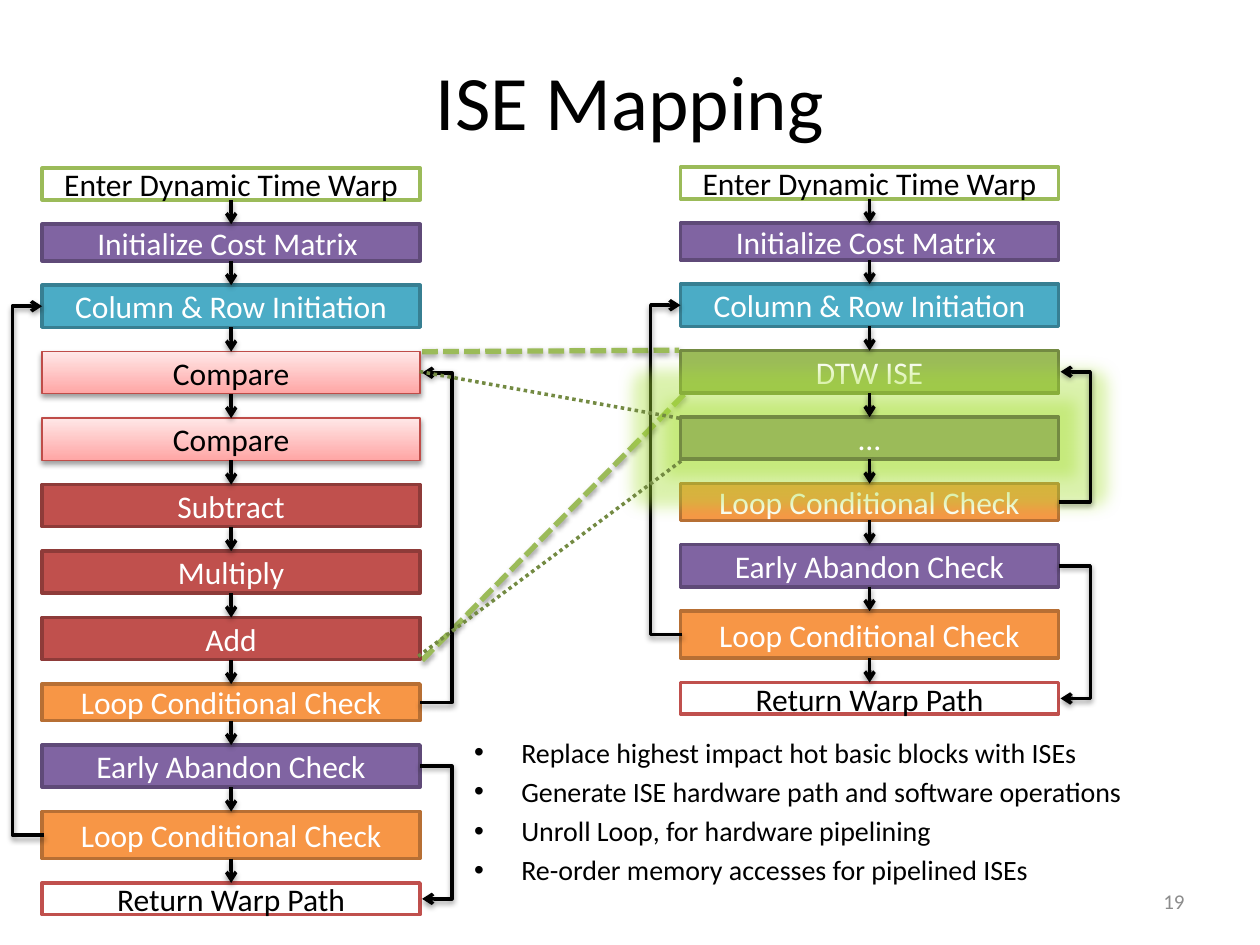
from lxml import etree
from pptx import Presentation
from pptx.dml.color import RGBColor
from pptx.enum.dml import MSO_LINE
from pptx.enum.shapes import MSO_CONNECTOR, MSO_SHAPE
from pptx.enum.text import MSO_ANCHOR, PP_ALIGN
from pptx.oxml import parse_xml
from pptx.oxml.ns import nsdecls, qn
from pptx.util import Cm, Pt

STRAIGHT, ELBOW = MSO_CONNECTOR.STRAIGHT, MSO_CONNECTOR.ELBOW
RECTANGLE = MSO_SHAPE.RECTANGLE
DASHED, DOTTED = MSO_LINE.SQUARE_DOT, MSO_LINE.ROUND_DOT
LEFT, CENTER, RIGHT = PP_ALIGN.LEFT, PP_ALIGN.CENTER, PP_ALIGN.RIGHT
TOP, MIDDLE = MSO_ANCHOR.TOP, MSO_ANCHOR.MIDDLE

BLACK, WHITE = RGBColor(0, 0, 0), RGBColor(255, 255, 255)
GRAY = RGBColor(0x8C, 0x8C, 0x8C)
GREEN, DARK_GREEN = RGBColor(0x9B, 0xBB, 0x59), RGBColor(0x73, 0x8A, 0x42)
RED, DARK_RED = RGBColor(0xC0, 0x50, 0x4D), RGBColor(0x8E, 0x3B, 0x39)
PURPLE, DARK_PURPLE = RGBColor(0x80, 0x64, 0xA2), RGBColor(0x5F, 0x4A, 0x78)
TEAL, DARK_TEAL = RGBColor(0x4B, 0xAC, 0xC6), RGBColor(0x37, 0x7F, 0x92)
ORANGE, DARK_ORANGE = RGBColor(0xF7, 0x96, 0x46), RGBColor(0xB7, 0x6F, 0x34)
PINK, PALE_PINK = RGBColor(0xFF, 0xA6, 0xA5), RGBColor(0xFF, 0xE7, 0xE7)
PINK_EDGE = RGBColor(0xBF, 0x4C, 0x48)

# style: fill (a list is a gradient from bottom to top), line, line width, text colour
STYLES = {
    "enter": (WHITE, GREEN, 2, BLACK),
    "return": (WHITE, RED, 2, BLACK),
    "setup": (PURPLE, DARK_PURPLE, 2, WHITE),
    "column": (TEAL, DARK_TEAL, 2, WHITE),
    "loop": (ORANGE, DARK_ORANGE, 2, WHITE),
    "compare": ([PINK, PALE_PINK], PINK_EDGE, 0.75, BLACK),
    "math": (RED, DARK_RED, 2, WHITE),
    "ise": (GREEN, DARK_GREEN, 2, WHITE),
    "glowing": (GREEN, DARK_GREEN, 2, WHITE),
}

# steps: text, style, height in cm
OPENING = [
    ("Enter Dynamic Time Warp", "enter", 0.64),
    ("Initialize Cost Matrix ", "setup", 0.74),
    ("Column & Row Initiation", "column", 0.85),
]
CLOSING = [
    ("Loop Conditional Check", "loop", 0.74),
    ("Early Abandon Check", "setup", 0.85),
    ("Loop Conditional Check", "loop", 0.95),
    ("Return Warp Path", "return", 0.64),
]
SOFTWARE = [
    ("Compare", "compare", 0.85),
    ("Compare", "compare", 0.85),
    ("Subtract", "math", 0.85),
    ("Multiply", "math", 0.85),
    ("Add", "math", 0.85),
]
HARDWARE = [("DTW ISE", "ise", 0.85), ("…", "glowing", 0.85)]

# flows: left, top, steps replaced by the mapping
FLOWS = [(0.85, 3.39, SOFTWARE), (13.72, 3.37, HARDWARE)]
BOX_WIDTH, GAP = 7.62, 0.49
BULGE, OVERLAP = 0.64, 0.04

# mapping lines: start, end
DASHED_LINES = [((8.51, 7.09), (13.69, 7.06)), ((8.51, 13.31), (13.79, 7.95))]
DOTTED_LINES = [((8.46, 7.49), (13.69, 8.43)), ((8.43, 13.23), (13.79, 9.25))]

BULLETS = [
    "Replace highest impact hot basic blocks with ISEs",
    "Generate ISE hardware path and software operations",
    "Unroll Loop, for hardware pipelining",
    "Re-order memory accesses for pipelined ISEs",
]

SHADOW = (
    f'<a:outerShdw {nsdecls("a")} blurRad="40000" dist="20000" dir="5400000" '
    'rotWithShape="0"><a:srgbClr val="000000"><a:alpha val="38000"/></a:srgbClr>'
    "</a:outerShdw>"
)
GLOW = (
    f'<a:glow {nsdecls("a")} rad="228600"><a:srgbClr val="A7DF34">'
    '<a:alpha val="40000"/></a:srgbClr></a:glow>'
)
EFFECTS = {"compare": SHADOW, "glowing": GLOW}


def write(frame, lines, size, color, align, anchor):
    """Fill a text frame with one paragraph per line, and return the paragraphs."""
    frame.word_wrap = True
    frame.vertical_anchor = anchor
    for index, line in enumerate(lines):
        para = frame.paragraphs[0] if index == 0 else frame.add_paragraph()
        para.alignment = align
        span = para.add_run()
        span.text = line
        for name, value in {"size": Pt(size), "name": "Calibri"}.items():
            setattr(span.font, name, value)
        span.font.color.rgb = color
    return frame.paragraphs


def add_text(page, place, *text_format):
    box = page.shapes.add_textbox(*map(Cm, place))
    return write(box.text_frame, *text_format)


def add_line(page, start, end, color=BLACK, width=2, kind=STRAIGHT,
             dash=None, arrow=True, shadow=True):
    line = page.shapes.add_connector(kind, *map(Cm, start + end))
    line.line.color.rgb = color
    line.line.width = Pt(width)
    if dash:
        line.line.dash_style = dash
    properties = line._element.spPr
    if arrow:
        etree.SubElement(properties.find(qn("a:ln")), qn("a:tailEnd"), type="arrow")
    effects = etree.SubElement(properties, qn("a:effectLst"))
    if shadow:
        effects.append(parse_xml(SHADOW))
    return line


def add_step(page, step, left, top):
    text, style, height = step
    fill, edge, width, color = STYLES[style]
    box = page.shapes.add_shape(RECTANGLE, *map(Cm, (left, top, BOX_WIDTH, height)))
    if isinstance(fill, list):
        box.fill.gradient()
        box.fill.gradient_angle = 90
        for stop, shade in zip(box.fill.gradient_stops, fill):
            stop.color.rgb = shade
    else:
        box.fill.solid()
        box.fill.fore_color.rgb = fill
    box.line.color.rgb = edge
    box.line.width = Pt(width)
    box.shadow.inherit = False
    if style in EFFECTS:
        box._element.spPr.find(qn("a:effectLst")).append(parse_xml(EFFECTS[style]))
    write(box.text_frame, [text], 18, color, CENTER, MIDDLE)


def add_loop(page, edge, start_y, end_y, side):
    """Draw a bracket arrow beside a flow; side is -1 for left, 1 for right."""
    start_x, end_x = (edge, edge + OVERLAP) if side > 0 else (edge + OVERLAP, edge)
    loop = add_line(page, (start_x, start_y), (end_x, end_y), kind=ELBOW)
    guides = loop._element.spPr.find(qn("a:prstGeom")).get_or_add_avLst()
    ratio = round(BULGE / OVERLAP * 100000)
    etree.SubElement(guides, qn("a:gd"), name="adj1", fmla=f"val {ratio}")


def add_flow(page, left, top, middle_steps):
    steps = OPENING + middle_steps + CLOSING
    tops = [top + sum(step[2] + GAP for step in steps[:i]) for i in range(len(steps))]
    middles = [y + step[2] / 2 for y, step in zip(tops, steps)]
    body = len(OPENING)
    inner, abandon, outer, finish = range(len(steps) - len(CLOSING), len(steps))

    # The glow lies over its neighbours and the outer loop
    for glowing in (False, True):
        for step, y in zip(steps, tops):
            if (step[1] == "glowing") == glowing:
                add_step(page, step, left, y)
        if not glowing:
            add_loop(page, left, middles[outer], middles[body - 1], -1)
    center = left + BOX_WIDTH / 2
    for y in tops[1:]:
        add_line(page, (center, y - GAP), (center, y))
    for start, end in ((inner, body), (abandon, finish)):
        add_loop(page, left + BOX_WIDTH, middles[start], middles[end], 1)


def main():
    deck = Presentation()
    deck.slide_width, deck.slide_height = Cm(25.4), Cm(19.05)
    page = deck.slides.add_slide(deck.slide_layouts[6])

    add_text(page, (18.2, 17.66, 5.93, 1.01), ["19"], 12, GRAY, RIGHT, MIDDLE)
    add_text(page, (1.27, 0.64, 22.86, 2.75), ["ISE Mapping"], 44, BLACK, CENTER, MIDDLE)
    for para in add_text(page, (9.31, 14.7, 15.44, 3.9), BULLETS, 16, BLACK, LEFT, TOP):
        para.space_before = Pt(3.2)
        properties = para._p.get_or_add_pPr()
        properties.set("marL", str(Cm(0.95)))
        properties.set("indent", str(-Cm(0.95)))
        etree.SubElement(properties, qn("a:buFont"), typeface="Arial")
        etree.SubElement(properties, qn("a:buChar"), char="•")

    for start, end in DASHED_LINES:
        add_line(page, start, end, GREEN, 3, dash=DASHED, arrow=False)
    for flow in FLOWS:
        add_flow(page, *flow)
    for start, end in DOTTED_LINES:
        add_line(page, start, end, DARK_GREEN, dash=DOTTED, arrow=False, shadow=False)

    deck.save("out.pptx")


if __name__ == "__main__":
    main()
